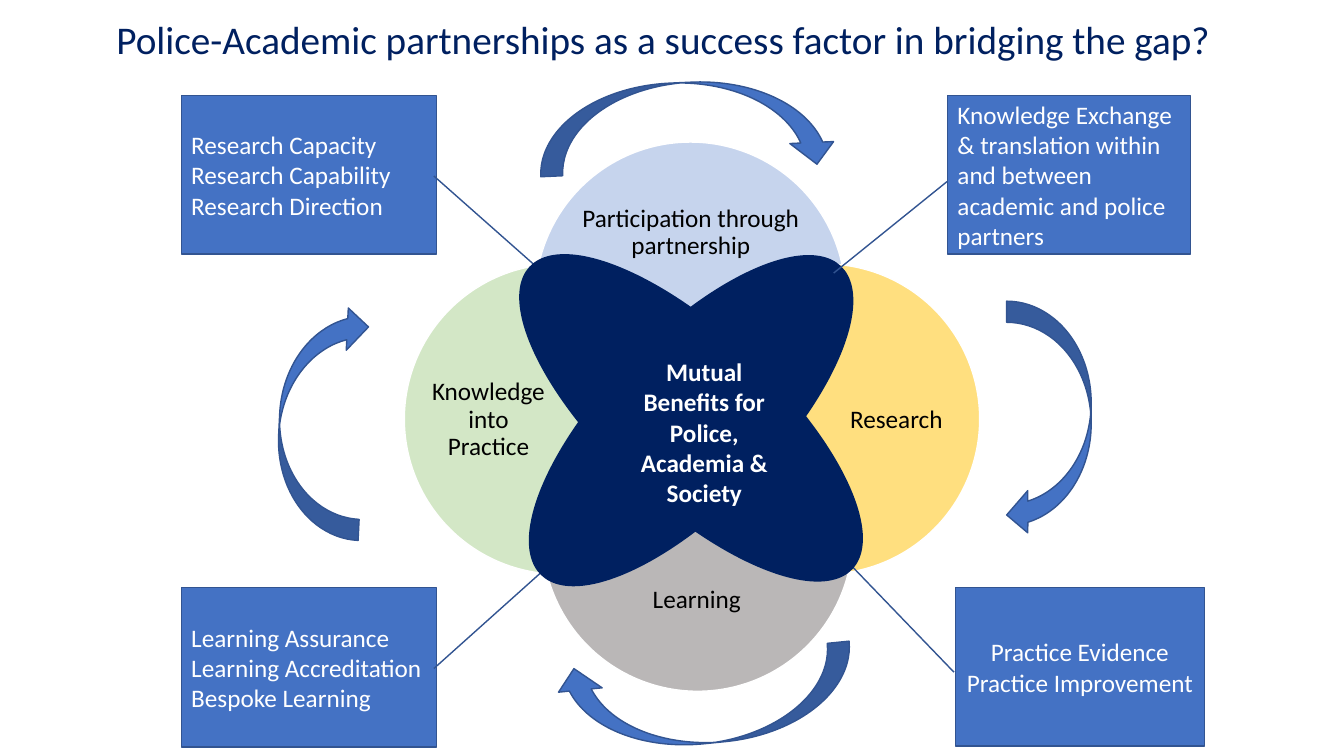
"""Build a slide on police-academic partnerships as a four-circle diagram."""
import lxml.etree
import pptx
import pptx.dml.color
import pptx.enum.shapes
import pptx.enum.text
import pptx.oxml.ns
import pptx.util

Cm = pptx.util.Cm
Pt = pptx.util.Pt
KIND = pptx.enum.shapes.MSO_SHAPE
ALIGN = pptx.enum.text.PP_ALIGN
ANCHOR = pptx.enum.text.MSO_ANCHOR
COLOURS = {
    "navy": "002060", "blue": "4472C4", "edge": "325491",
    "white": "FFFFFF", "black": "000000", "sky": "8FAADC",
    "gold": "FFC000", "grey": "767171", "green": "A9D18E",
}


def add_shape(kind, box, fill, line=None, rotation=0):
    shape = slide.shapes.add_shape(kind, *(Cm(length) for length in box))
    shape.shadow.inherit = False
    shape.rotation = rotation
    shape.fill.solid()
    shape.fill.fore_color.rgb = pptx.dml.color.RGBColor.from_string(COLOURS[fill])
    if line:
        shape.line.color.rgb = pptx.dml.color.RGBColor.from_string(COLOURS[line])
        shape.line.width = Pt(1)
    else:
        shape.line.fill.background()
    return shape


def write_text(shape, lines, colour, align=ALIGN.CENTER, anchor=ANCHOR.MIDDLE,
               size=18, bold=False, spacing=1.0):
    frame = shape.text_frame
    frame.word_wrap = True
    frame.auto_size = pptx.enum.text.MSO_AUTO_SIZE.NONE
    frame.vertical_anchor = anchor
    for index, line in enumerate(lines):
        paragraph = frame.add_paragraph() if index else frame.paragraphs[0]
        paragraph.alignment = align
        paragraph.line_spacing = spacing
        run = paragraph.add_run()
        run.text = line
        run.font.name = "Calibri"
        run.font.size = Pt(size)
        run.font.bold = bold
        run.font.color.rgb = pptx.dml.color.RGBColor.from_string(COLOURS[colour])


presentation = pptx.Presentation()
presentation.slide_width = Cm(33.87)
presentation.slide_height = Cm(19.05)
slide = presentation.slides.add_slide(presentation.slide_layouts[5])

title = slide.shapes.title
title.left, title.top, title.width, title.height = Cm(-0.1), Cm(0.25), Cm(34.06), Cm(1.45)
title.text_frame.margin_right = Cm(0.7)
write_text(title, ["Police-Academic partnerships as a success factor in bridging the gap?"],
           "navy", anchor=ANCHOR.TOP, size=28)

DIAMETER = 7.82
circles = [
    ("Participation through partnership", "sky", (13.49, 3.58), (14.4, 4.62, 6.02, 2.49)),
    ("Research", "gold", (16.87, 6.65), (21.08, 7.57, 3.02, 6.02)),
    ("Learning", "grey", (13.67, 9.6), (14.55, 13.89, 6.02, 2.49)),
    ("Knowledge into Practice", "green", (10.19, 6.65), (10.8, 7.57, 3.02, 6.02)),
]
for text, colour, corner, label_box in circles:
    circle = add_shape(KIND.OVAL, (*corner, DIAMETER, DIAMETER), colour, "white")
    fill_colour = circle.fill._xPr.find(".//" + pptx.oxml.ns.qn("a:srgbClr"))
    lxml.etree.SubElement(fill_colour, pptx.oxml.ns.qn("a:alpha"), val="50000")
    label = slide.shapes.add_textbox(*(Cm(length) for length in label_box))
    frame = label.text_frame
    frame.margin_left = frame.margin_right = frame.margin_top = frame.margin_bottom = 0
    write_text(label, [text], "black", spacing=0.9)

CALLOUT = KIND.LINE_CALLOUT_1
centre_parts = [
    (CALLOUT, (4.57, 14.81, 6.43, 4.01), 0, (0.508, 0.99, -0.137, 1.439), ALIGN.LEFT,
     ["Learning Assurance", "Learning Accreditation", "Bespoke Learning"]),
    (CALLOUT, (24.08, 14.81, 6.27, 3.99), 0, (0.534, -0.006, -0.169, -0.437), ALIGN.CENTER,
     ["Practice Evidence", "Practice Improvement"]),
    (CALLOUT, (4.57, 2.41, 6.43, 3.99), 0, (0.508, 0.99, 1.095, 1.402), ALIGN.LEFT,
     ["Research Capacity", "Research Capability", "Research Direction"]),
    (KIND.OVAL, (11.99, 8.43, 10.85, 4.34), 134.2, (), None, []),
    (KIND.OVAL, (11.84, 8.36, 11.15, 4.34), 43.1, (), None, []),
    (KIND.RECTANGLE, (15.54, 8.86, 4.42, 4.11), 0, (), ALIGN.CENTER,
     ["Mutual", "Benefits for Police, Academia & Society"]),
    (CALLOUT, (23.88, 2.41, 6.12, 3.99), 0, (0.543, -0.002, 1.121, -0.469), ALIGN.LEFT,
     ["Knowledge Exchange & translation within and between academic and police partners"]),
]
for kind, box, rotation, pointer, align, lines in centre_parts:
    is_callout = kind == CALLOUT
    fill, line = ("blue", "edge") if is_callout else ("navy", None)
    shape = add_shape(kind, box, fill, line, rotation)
    for index, value in enumerate(pointer):
        shape.adjustments[index] = value
    write_text(shape, lines, "white", align,
               ANCHOR.MIDDLE if is_callout else ANCHOR.TOP, bold=not is_callout)

cycle_arrows = [
    ((25.37, 7.59, 2.13, 5.92), 0),
    ((16.66, 13.87, 2.21, 7.52), 84.3),
    ((7.04, 7.65, 2.13, 5.92), 182.8),
    ((16.23, -0.58, 2.21, 7.52), 267.4),
]
for box, rotation in cycle_arrows:
    add_shape(KIND.CURVED_LEFT_ARROW, box, "blue", "edge", rotation)

presentation.save("out.pptx")
